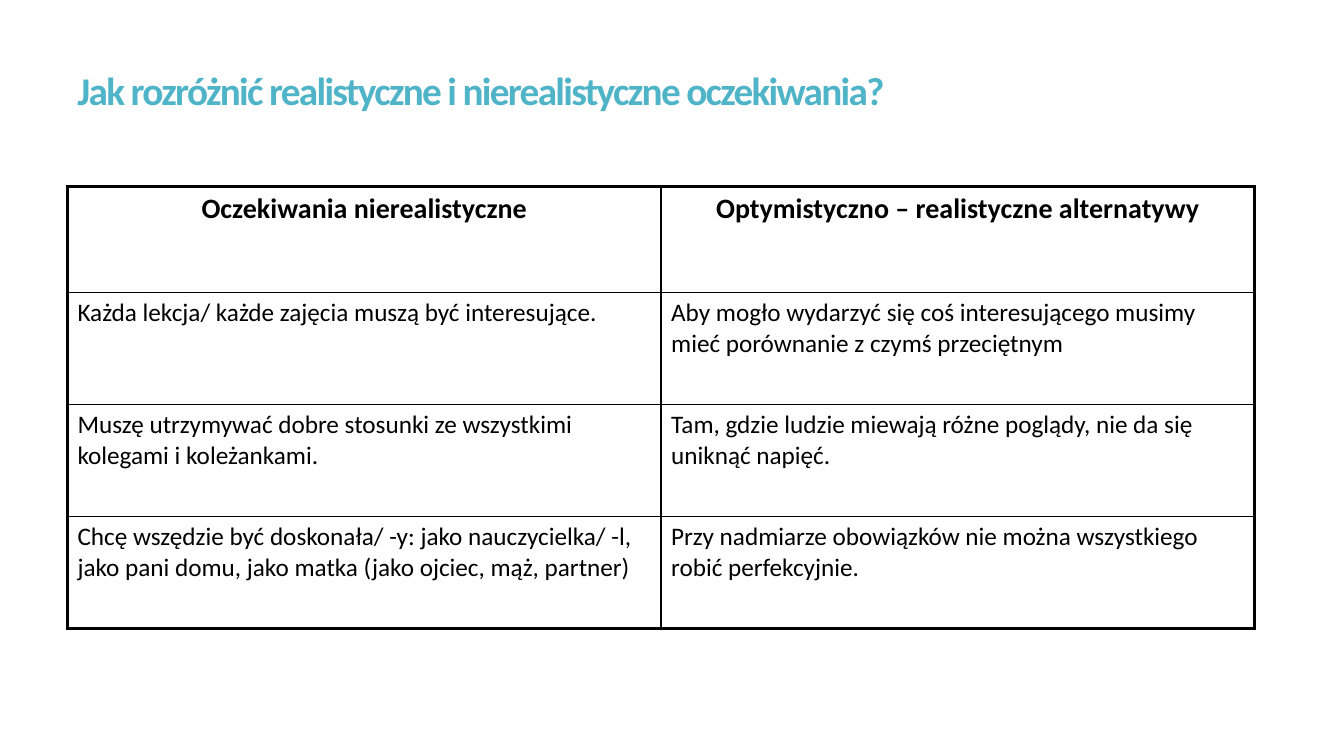
"""Build a slide with a table of unrealistic expectations and realistic alternatives."""
from lxml import etree
from pptx import Presentation, util as u
from pptx.dml.color import RGBColor
from pptx.enum import text
from pptx.oxml import ns


def style(para, size, color, bold):
    font = para.font
    font.name, font.size, font.bold = "Calibri", u.Pt(size), bold
    font.color.rgb = RGBColor.from_string(color)


def border(cell, index, side, width):
    line = etree.Element(ns.qn(f"a:ln{side}"), w=str(u.Pt(width)))
    fill = etree.SubElement(line, ns.qn("a:solidFill"))
    etree.SubElement(fill, ns.qn("a:srgbClr"), val="000000")
    cell._tc.get_or_add_tcPr().insert(index, line)


deck = Presentation()
deck.slide_width, deck.slide_height = u.Cm(33.87), u.Cm(19.05)
slide = deck.slides.add_slide(deck.slide_layouts[6])

title = slide.shapes.add_textbox(u.Cm(1.7), u.Cm(0.76), u.Cm(30.48), u.Cm(3.18)).text_frame
title.word_wrap = True
title.vertical_anchor = text.MSO_ANCHOR.MIDDLE
para = title.paragraphs[0]
para.line_spacing = 0.85
run = para.add_run()
run.text = "Jak rozróżnić realistyczne i nierealistyczne oczekiwania?"
run.font._element.set("spc", "-120")
style(para, 28, "50B4C8", True)

rows = [
    ("Oczekiwania nierealistyczne", "Optymistyczno – realistyczne alternatywy"),
    ("Każda lekcja/ każde zajęcia muszą być interesujące.",
     "Aby mogło wydarzyć się coś interesującego musimy mieć porównanie z czymś przeciętnym"),
    ("Muszę utrzymywać dobre stosunki ze wszystkimi kolegami i koleżankami.",
     "Tam, gdzie ludzie miewają różne poglądy, nie da się uniknąć napięć."),
    ("Chcę wszędzie być doskonała/ -y: jako nauczycielka/ -l, "
     "jako pani domu, jako matka (jako ojciec, mąż, partner)",
     "Przy nadmiarze obowiązków nie można wszystkiego robić perfekcyjnie."),
]
heights = [2.67, 2.82, 2.82, 2.82]
table = slide.shapes.add_table(
    len(rows), 2, u.Cm(1.7), u.Cm(4.7), u.Cm(29.92), u.Cm(sum(heights))).table
table.horz_banding = False
for col in table.columns:
    col.width = u.Cm(14.96)

for r, row in enumerate(rows):
    table.rows[r].height = u.Cm(heights[r])
    head = r == 0
    for c, words in enumerate(row):
        cell = table.cell(r, c)
        cell.text = words
        cell.fill.background()
        para = cell.text_frame.paragraphs[0]
        para.alignment = text.PP_ALIGN.CENTER if head else text.PP_ALIGN.LEFT
        style(para, 20 if head else 18, "000000", head)
        outer = {"L": c == 0, "R": c == 1, "T": head, "B": r == len(rows) - 1}
        for i, (side, edge) in enumerate(outer.items()):
            border(cell, i, side, 2.25 if edge else 1)

deck.save("out.pptx")
